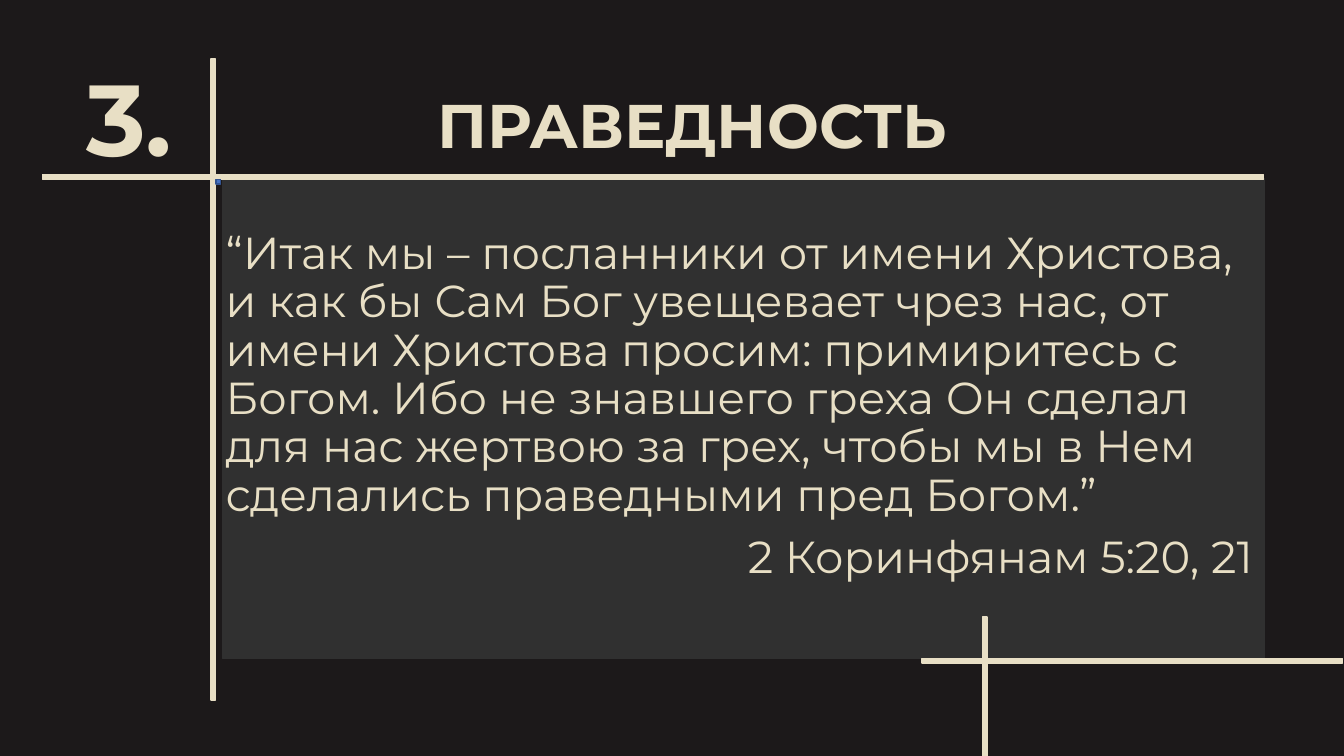
from pptx import Presentation
from pptx.dml.color import RGBColor
from pptx.enum.shapes import MSO_SHAPE as Shape
from pptx.enum.text import MSO_ANCHOR as Anchor, PP_ALIGN as Align
from pptx.util import Cm, Pt

FONT = "Montserrat"
CREAM, DARK, PANEL = "E8DFC5", "1C191A", "303030"
BLUE, BLUE_EDGE = "4472C4", "325491"

NUMBER = "3."
HEADING = "ПРАВЕДНОСТЬ"
VERSE = (
    "“Итак мы – посланники от имени Христова, и как бы Сам Бог увещевает "
    "чрез нас, от имени Христова просим: примиритесь с Богом. Ибо не знавшего "
    "греха Он сделал для нас жертвою за грех, чтобы мы в Нем сделались "
    "праведными пред Богом.”"
)
REFERENCE = "2 Коринфянам 5:20, 21"

# Boxes are left, top, width, height in centimetres
PANEL_BOX = (5.61, 4.5, 26.26, 12.09)
NUMBER_BOX = (1.14, 1.52, 4.24, 3.2)
VERSE_BOX = (5.44, 4.39, 26.39, 12.09)
HEADING_BOX = (5.69, 1.4, 23.52, 3.68)
THICK = 0.12
BARS = [
    (5.32, 1.49, THICK, 16.15),
    (1.07, 4.4, 30.78, THICK),
    (24.76, 15.55, THICK, 3.5),
    (23.24, 16.59, 10.59, THICK),
]
DOT_BOX = (5.44, 4.52, THICK, THICK)
VERSE_INSET = 1.42


def color(value):
    return RGBColor.from_string(value)


def add_block(slide, box, fill, edge=None):
    block = slide.shapes.add_shape(Shape.RECTANGLE, *map(Cm, box))
    block.shadow.inherit = False
    block.fill.solid()
    block.fill.fore_color.rgb = color(fill)
    block.line.color.rgb = color(edge or fill)
    block.line.width = Pt(1)


def add_text(slide, box, lines, size=32, bold=False, anchor=Anchor.MIDDLE,
             inset=0.13, gap=0):
    """Add a text box; lines holds pairs of text and alignment."""
    frame = slide.shapes.add_textbox(*map(Cm, box)).text_frame
    frame.word_wrap = True
    frame.vertical_anchor = anchor
    frame.margin_top = Cm(inset)
    for index, (text, align) in enumerate(lines):
        paragraph = frame.add_paragraph() if index else frame.paragraphs[0]
        paragraph.alignment = align
        paragraph.line_spacing = 0.9
        paragraph.space_before = Pt(gap if index else 0)
        run = paragraph.add_run()
        run.text = text
        run.font.name = FONT
        run.font.size = Pt(size)
        run.font.bold = bold
        run.font.color.rgb = color(CREAM)


def main():
    presentation = Presentation()
    presentation.slide_width, presentation.slide_height = Cm(33.87), Cm(19.05)
    slide = presentation.slides.add_slide(presentation.slide_layouts[6])
    slide.background.fill.solid()
    slide.background.fill.fore_color.rgb = color(DARK)

    add_block(slide, PANEL_BOX, PANEL)
    add_text(slide, NUMBER_BOX, [(NUMBER, Align.CENTER)], size=72, bold=True)
    add_text(slide, VERSE_BOX, [(VERSE, Align.LEFT), (REFERENCE, Align.RIGHT)],
             anchor=Anchor.TOP, inset=VERSE_INSET, gap=10)
    add_text(slide, HEADING_BOX, [(HEADING, Align.CENTER)], size=44, bold=True)
    for bar in BARS:
        add_block(slide, bar, CREAM)
    add_block(slide, DOT_BOX, BLUE, BLUE_EDGE)

    presentation.save("out.pptx")


if __name__ == "__main__":
    main()
